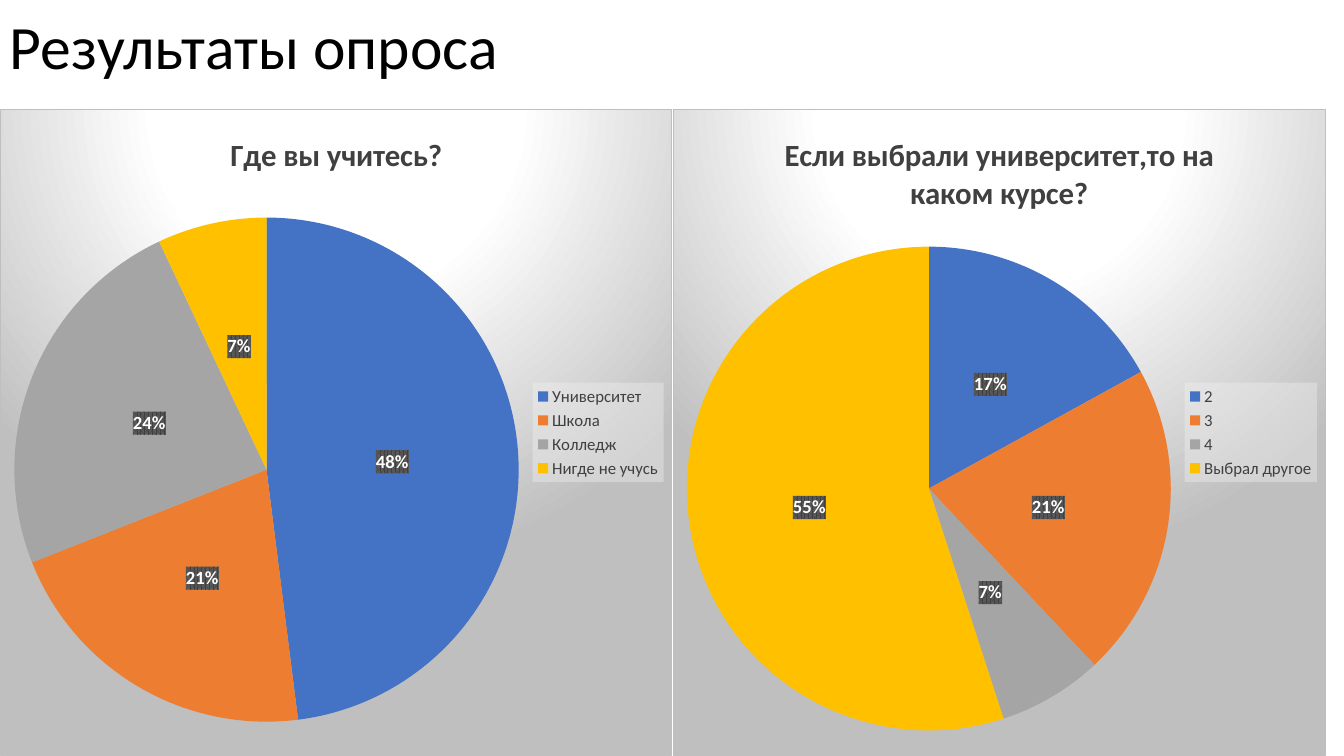
import pptx
import pptx.chart.data
import pptx.dml.color
import pptx.enum.chart
import pptx.enum.text
import pptx.oxml
import pptx.util
from pptx.util import Inches

# Content
HEADING = "Результаты опроса"
SURVEY = [
    {
        "question": "Где вы учитесь?",
        "answers": {"Университет": 48, "Школа": 21, "Колледж": 24, "Нигде не учусь": 7},
        "width": 6.67,
    },
    {
        "question": "Если выбрали университет,то на каком курсе?",
        "answers": {"2": 17, "3": 21, "4": 7, "Выбрал другое": 55},
        "width": 6.48,
    },
]

# Style
FONT = "Calibri"
BLACK = pptx.dml.color.RGBColor(0x00, 0x00, 0x00)
WHITE = pptx.dml.color.RGBColor(0xFF, 0xFF, 0xFF)
DARK = pptx.dml.color.RGBColor(0x40, 0x40, 0x40)
SLICES = [
    pptx.dml.color.RGBColor.from_string(code)
    for code in ("4472C4", "ED7D31", "A5A5A5", "FFC000")
]
SLIDE_WIDTH, SLIDE_HEIGHT = 13.33, 7.5
CHART_TOP = 1.08

PANEL_FILL = """
<a:gradFill>
  <a:gsLst>
    <a:gs pos="0"><a:srgbClr val="FFFFFF"/></a:gs>
    <a:gs pos="39000"><a:srgbClr val="FFFFFF"/></a:gs>
    <a:gs pos="100000"><a:srgbClr val="BFBFBF"/></a:gs>
  </a:gsLst>
  <a:path path="circle">
    <a:fillToRect l="50000" t="-80000" r="50000" b="180000"/>
  </a:path>
</a:gradFill>
<a:ln w="9525"><a:solidFill><a:srgbClr val="BFBFBF"/></a:solidFill></a:ln>
"""
LEGEND_FILL = """
<a:solidFill><a:srgbClr val="F2F2F2"><a:alpha val="39000"/></a:srgbClr></a:solidFill>
<a:ln><a:noFill/></a:ln>
"""
LABEL_FILL = """
<a:pattFill prst="pct75">
  <a:fgClr><a:srgbClr val="404040"/></a:fgClr>
  <a:bgClr><a:srgbClr val="595959"/></a:bgClr>
</a:pattFill>
<a:ln><a:noFill/></a:ln>
"""


def set_font(font, size, color, bold=False):
    font.name = FONT
    font.size = pptx.util.Pt(size)
    font.color.rgb = color
    font.bold = bold


def write_text(frame, text, **style):
    para = frame.paragraphs[0]
    span = para.add_run()
    span.text = text
    set_font(span.font, **style)
    return para


def add_fill(element, fill):
    """Put shape properties just before the text properties of a chart part."""
    properties = pptx.oxml.parse_xml(
        '<c:spPr xmlns:c="http://schemas.openxmlformats.org/drawingml/2006/chart"'
        ' xmlns:a="http://schemas.openxmlformats.org/drawingml/2006/main">'
        f"{fill}</c:spPr>"
    )
    element.txPr.addprevious(properties)


def add_pie(page, left, question, answers, width):
    data = pptx.chart.data.CategoryChartData()
    data.categories = list(answers)
    data.add_series(question, list(answers.values()))
    chart = page.shapes.add_chart(
        pptx.enum.chart.XL_CHART_TYPE.PIE,
        Inches(left), Inches(CHART_TOP),
        Inches(width), Inches(SLIDE_HEIGHT - CHART_TOP), data,
    ).chart
    set_font(chart.font, 10, BLACK)
    add_fill(chart._chartSpace, PANEL_FILL)

    # Question
    chart.has_title = True
    write_text(chart.chart_title.text_frame, question, size=22, color=DARK, bold=True)

    # Legend
    chart.has_legend = True
    legend = chart.legend
    legend.position = pptx.enum.chart.XL_LEGEND_POSITION.RIGHT
    legend.include_in_layout = False
    set_font(legend.font, 12, DARK)
    add_fill(legend._element, LEGEND_FILL)

    # Slices
    plot = chart.plots[0]
    plot.vary_by_categories = True
    for index, color in enumerate(SLICES):
        fill = plot.series[0].points[index].format.fill
        fill.solid()
        fill.fore_color.rgb = color

    # Percentages
    labels = plot.series[0].data_labels
    set_font(labels.font, 13.3, WHITE, bold=True)
    labels.show_percentage = True
    labels.show_value = False
    labels.number_format = "0%"
    labels.number_format_is_linked = False
    labels.position = pptx.enum.chart.XL_LABEL_POSITION.CENTER
    add_fill(labels._element, LABEL_FILL)


def main():
    deck = pptx.Presentation()
    deck.slide_width = Inches(SLIDE_WIDTH)
    deck.slide_height = Inches(SLIDE_HEIGHT)
    page = deck.slides.add_slide(deck.slide_layouts[6])

    # Heading
    box = page.shapes.add_textbox(Inches(0), Inches(-0.23), Inches(11.5), Inches(1.45))
    box.text_frame.word_wrap = True
    box.text_frame.vertical_anchor = pptx.enum.text.MSO_ANCHOR.MIDDLE
    para = write_text(box.text_frame, HEADING, size=44, color=BLACK)
    para.line_spacing = 0.9

    # Charts side by side
    left = 0
    for entry in SURVEY:
        add_pie(page, left, **entry)
        left += entry["width"]

    deck.save("out.pptx")


if __name__ == "__main__":
    main()
